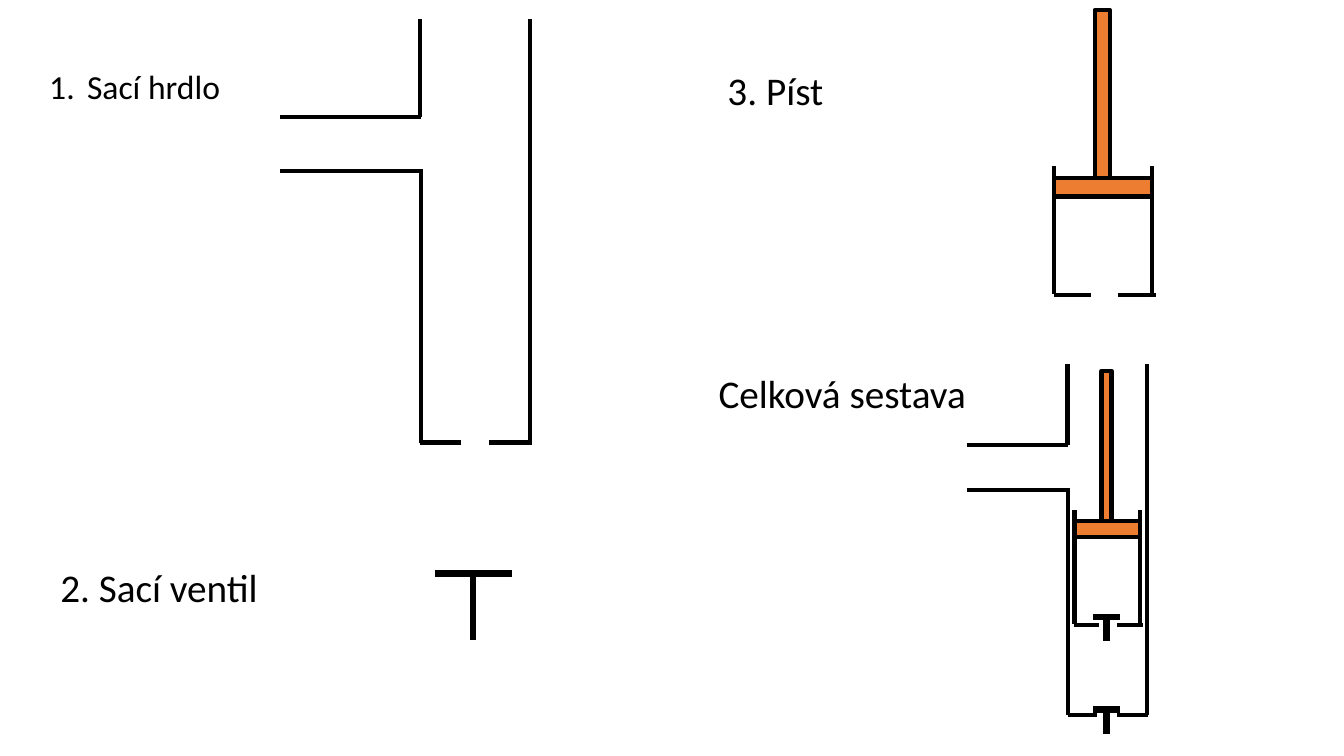
import pptx
import pptx.dml.color
import pptx.enum.shapes
import pptx.enum.text
import pptx.oxml
import pptx.oxml.ns
import pptx.util
import lxml.etree

Pt = pptx.util.Pt
qn = pptx.oxml.ns.qn


def rgb(value):
    return pptx.dml.color.RGBColor.from_string(value)


class Drawing:
    font = "Calibri"
    ink = "000000"
    accent = "ED7D31"
    wall = 3
    valve_width = 4.5

    def __init__(self, s):
        self.s = s
        self.g = None

    def group(self):
        self.g = self.s.shapes.add_group_shape()

    def line(self, x1, y1, x2, y2, width=wall):
        sp = self.g.shapes.add_connector(
            pptx.enum.shapes.MSO_CONNECTOR.STRAIGHT, Pt(x1), Pt(y1), Pt(x2), Pt(y2))
        sp.line.color.rgb = rgb(self.ink)
        sp.line.width = Pt(width)
        lxml.etree.SubElement(sp._element.spPr, qn("a:effectLst"))

    def rect(self, x, y, w, h):
        sp = self.g.shapes.add_shape(
            pptx.enum.shapes.MSO_SHAPE.RECTANGLE, Pt(x), Pt(y), Pt(w), Pt(h))
        sp.shadow.inherit = False
        sp.fill.solid()
        sp.fill.fore_color.rgb = rgb(self.accent)
        sp.line.color.rgb = rgb(self.ink)
        sp.line.width = Pt(self.wall)

    def text(self, x, y, w, h, content, size=28):
        sp = self.s.shapes.add_textbox(Pt(x), Pt(y), Pt(w), Pt(h))
        tf = sp.text_frame
        tf.word_wrap = True
        tf.auto_size = pptx.enum.text.MSO_AUTO_SIZE.SHAPE_TO_FIT_TEXT
        p = tf.paragraphs[0]
        r = p.add_run()
        r.text = content
        r.font.size = Pt(size)
        r.font.name = self.font
        r.font.color.rgb = rgb(self.ink)
        return p

    def numbered(self, x, y, w, h, content, size, margin, hanging):
        p = self.text(x, y, w, h, content, size)
        p.level = 2
        p.line_spacing = 0.9
        p.space_before = Pt(5)
        pPr = p._p.get_or_add_pPr()
        pPr.set("marL", str(Pt(margin)))
        pPr.set("indent", str(-Pt(hanging)))
        lxml.etree.SubElement(pPr, qn("a:buFont"), typeface="+mj-lt")
        lxml.etree.SubElement(pPr, qn("a:buAutoNum"), type="arabicPeriod")

    def walls(self, x, y, kx, ky, lines):
        for x1, y1, x2, y2 in lines:
            self.line(x + kx * x1, y + ky * y1, x + kx * x2, y + ky * y2)

    def housing(self, x, y, kx=1, ky=1):
        self.walls(x, y, kx, ky, [
            (100.8, 108.7, 100.8, 302.4),
            (178.6, 0, 178.6, 302.4),
            (0, 69.8, 100.8, 69.8),
            (0, 108.7, 102.2, 108.7),
            (100.1, 302.4, 128.9, 302.4),
            (149, 302.4, 180, 302.4),
            (100.1, 0, 100.1, 69.8),
        ])

    def piston(self, x, y, kx=1, ky=1):
        self.walls(x, y, kx, ky, [
            (0, 111.6, 0, 203),
            (69.8, 111.6, 69.8, 203),
            (0, 203.8, 25.9, 203.8),
            (45.4, 203.8, 72.7, 203.8),
        ])
        for left, top, w, h in [(0, 120.2, 69.8, 13), (28.8, 0, 10.8, 120.2)]:
            self.rect(x + kx * left, y + ky * top, kx * w, ky * h)

    def valve(self, x, y, half, stem):
        self.line(x - half, y, x + half, y, self.valve_width)
        self.line(x, y, x, y + stem, self.valve_width)


def main():
    prs = pptx.Presentation()
    prs.slide_width = Pt(960)
    prs.slide_height = Pt(540)
    d = Drawing(prs.slides.add_slide(prs.slide_layouts[6]))

    d.group()
    d.piston(753.1, 7.2)
    d.numbered(-43.9, 46.8, 318.2, 33.1, "Sací hrdlo", 24, margin=99, hanging=27)

    d.group()
    d.housing(200.2, 13.7)
    d.text(36, 398.9, 220.3, 41, "2. Sací ventil")

    d.group()
    d.valve(338, 409.7, 27.4, 47.5)
    d.text(512.6, 43.9, 259.2, 41, "3. Píst")

    d.group()
    d.housing(690.5, 259.9, 0.72, 0.83)
    d.valve(790.4, 506.9, 9.5, 17.3)
    d.piston(767.5, 265, 0.67, 0.89)
    d.valve(790.4, 440.6, 9.5, 17.3)
    d.text(506.2, 259.9, 231.1, 41, "Celková sestava")

    prs.save("out.pptx")


if __name__ == "__main__":
    main()
